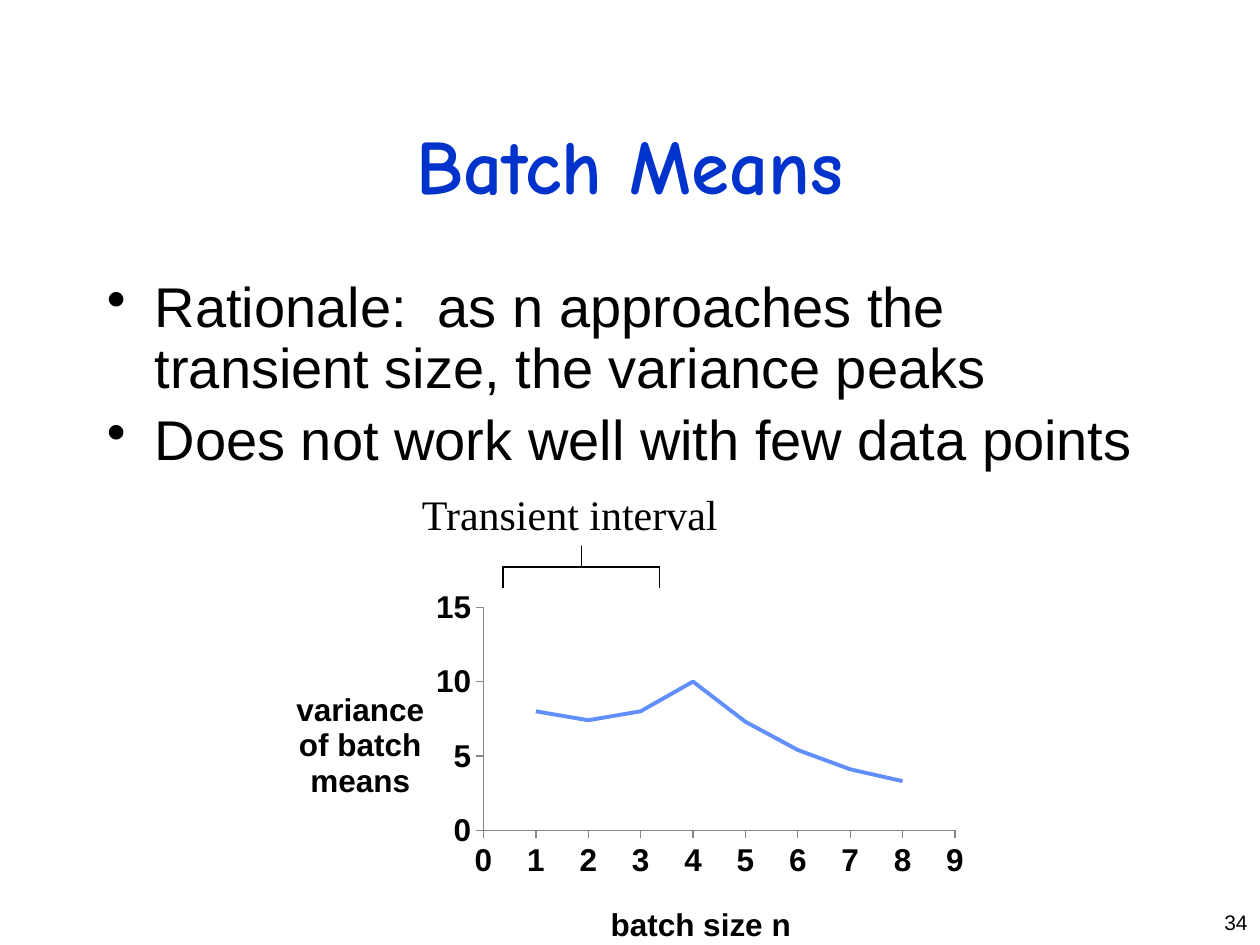
from dataclasses import dataclass, field

import pptx
import pptx.chart.data
import pptx.dml.color
import pptx.enum.chart
import pptx.enum.shapes
import pptx.enum.text
import pptx.oxml
import pptx.oxml.ns
import pptx.util
from pptx.util import Inches

ALIGN = pptx.enum.text.PP_ALIGN
ANCHOR = pptx.enum.text.MSO_ANCHOR
BLACK = "000000"
BATCH_VARIANCES = [8, 7.4, 8, 10, 7.3, 5.4, 4.1, 3.3]


@dataclass
class TextBox:
    at: tuple[float, float, float, float]
    lines: list[str]
    font: str
    size: float
    color: str = BLACK
    bold: bool = False
    bullets: bool = False
    frame: dict = field(default_factory=dict)
    para: dict = field(default_factory=dict)


TEXTS = [
    TextBox((0.75, 0.67, 8.5, 1.25), ["Batch Means"], "Comic Neue", 44, "0033CC", True,
            frame={"vertical_anchor": ANCHOR.MIDDLE}, para={"alignment": ALIGN.CENTER}),
    TextBox((0.75, 2.17, 8.5, 4.5),
            ["Rationale:  as n approaches the transient size, the variance peaks",
             "Does not work well with few data points"],
            "Arial", 32, bullets=True,
            para={"line_spacing": 0.9, "space_before": pptx.util.Pt(6.4)}),
    TextBox((9.25, 7.17, 0.75, 0.33), ["34"], "Arial", 12, para={"alignment": ALIGN.RIGHT}),
    TextBox((3.25, 3.83, 2.57, 0.5), ["Transient interval"], "Times New Roman", 24,
            frame={"word_wrap": False}),
]


def rgb(value: str) -> pptx.dml.color.RGBColor:
    return pptx.dml.color.RGBColor.from_string(value)


def set_all(target, values: dict) -> None:
    for name, value in values.items():
        setattr(target, name, value)


def set_font(font, name: str, size: float, color: str, bold: bool) -> None:
    set_all(font, {"name": name, "size": pptx.util.Pt(size), "bold": bold})
    font.color.rgb = rgb(color)


def add_bullet(p) -> None:
    pPr = p._p.get_or_add_pPr()
    pPr.set("marL", str(Inches(0.38)))
    pPr.set("indent", str(Inches(-0.38)))
    bullet = pptx.oxml.parse_xml(f'<a:buChar {pptx.oxml.ns.nsdecls("a")} char="•"/>')
    pPr.append(bullet)


def add_text(s, box: TextBox) -> None:
    tf = s.shapes.add_textbox(*map(Inches, box.at)).text_frame
    set_all(tf, {"word_wrap": True} | box.frame)
    for i, line in enumerate(box.lines):
        p = tf.add_paragraph() if i else tf.paragraphs[0]
        set_all(p, box.para)
        if box.bullets:
            add_bullet(p)
        r = p.add_run()
        r.text = line
        set_font(r.font, box.font, box.size, box.color, box.bold)


def add_brace(s) -> None:
    sp = s.shapes.add_shape(pptx.enum.shapes.MSO_SHAPE.RIGHT_BRACE,
                            Inches(4.45), Inches(3.88), Inches(0.33), Inches(1.24))
    sp.rotation = 270
    sp.adjustments[0], sp.adjustments[1] = 0, 0.5
    sp.shadow.inherit = False
    sp.fill.background()
    sp.line.color.rgb = rgb(BLACK)
    sp.line.width = pptx.util.Pt(1)


def layout_xml(x: float, y: float, w: float = 0, h: float = 0):
    """Manual chart layout in fractions of the chart; without a size only the place is set."""
    target = '<c:layoutTarget val="inner"/>' if w else ""
    size = f'<c:w val="{w}"/><c:h val="{h}"/>' if w else ""
    return pptx.oxml.parse_xml(
        f'<c:layout {pptx.oxml.ns.nsdecls("c")}><c:manualLayout>{target}'
        f'<c:xMode val="edge"/><c:yMode val="edge"/><c:x val="{x}"/><c:y val="{y}"/>'
        f'{size}</c:manualLayout></c:layout>')


def place(element, layout, index: int) -> None:
    for old in element.findall(pptx.oxml.ns.qn("c:layout")):
        element.remove(old)
    element.insert(index, layout)


def format_axis(axis, title: str, at: tuple[float, float], scale: dict) -> None:
    set_all(axis, scale | {"has_major_gridlines": False,
                           "major_tick_mark": pptx.enum.chart.XL_TICK_MARK.OUTSIDE})
    axis.format.line.color.rgb = rgb("868686")
    axis.tick_labels.number_format = "General"
    axis.tick_labels.number_format_is_linked = False
    tf = axis.axis_title.text_frame
    tf.text = title
    set_font(tf.paragraphs[0].runs[0].font, "Arial", 18, BLACK, True)
    tf._txBody.bodyPr.set("rot", "0")
    tf._txBody.bodyPr.set("vert", "horz")
    place(axis.axis_title._element, layout_xml(*at), 1)


def add_variance_chart(s) -> None:
    data = pptx.chart.data.XyChartData()
    series = data.add_series("Series 1")
    for n, variance in enumerate(BATCH_VARIANCES, 1):
        series.add_data_point(n, variance)
    chart = s.shapes.add_chart(
        pptx.enum.chart.XL_CHART_TYPE.XY_SCATTER_LINES_NO_MARKERS,
        Inches(2.08), Inches(4.64), Inches(5.67), Inches(3), data).chart
    set_all(chart, {"has_legend": False, "has_title": False})
    set_font(chart.font, "Arial", 18, BLACK, True)
    plot = chart.plots[0]
    plot.vary_by_categories = False
    line = plot.series[0]
    line.smooth = False
    line.format.line.color.rgb = rgb("618FFD")
    line.format.line.width = pptx.util.Pt(2.25)
    format_axis(chart.category_axis, "batch size n", (0.48, 0.83),
                {"minimum_scale": 0, "maximum_scale": 9, "major_unit": 1})
    format_axis(chart.value_axis, "variance of batch means", (0.04, 0.26),
                {"minimum_scale": 0, "maximum_scale": 15, "major_unit": 5})
    place(chart._chartSpace.chart.plotArea, layout_xml(0.31, 0.06, 0.66, 0.59), 0)


def main() -> None:
    prs = pptx.Presentation()
    prs.slide_width, prs.slide_height = Inches(10), Inches(7.5)
    s = prs.slides.add_slide(prs.slide_layouts[6])
    for box in TEXTS:
        add_text(s, box)
    add_brace(s)
    add_variance_chart(s)
    prs.save("out.pptx")


if __name__ == "__main__":
    main()
